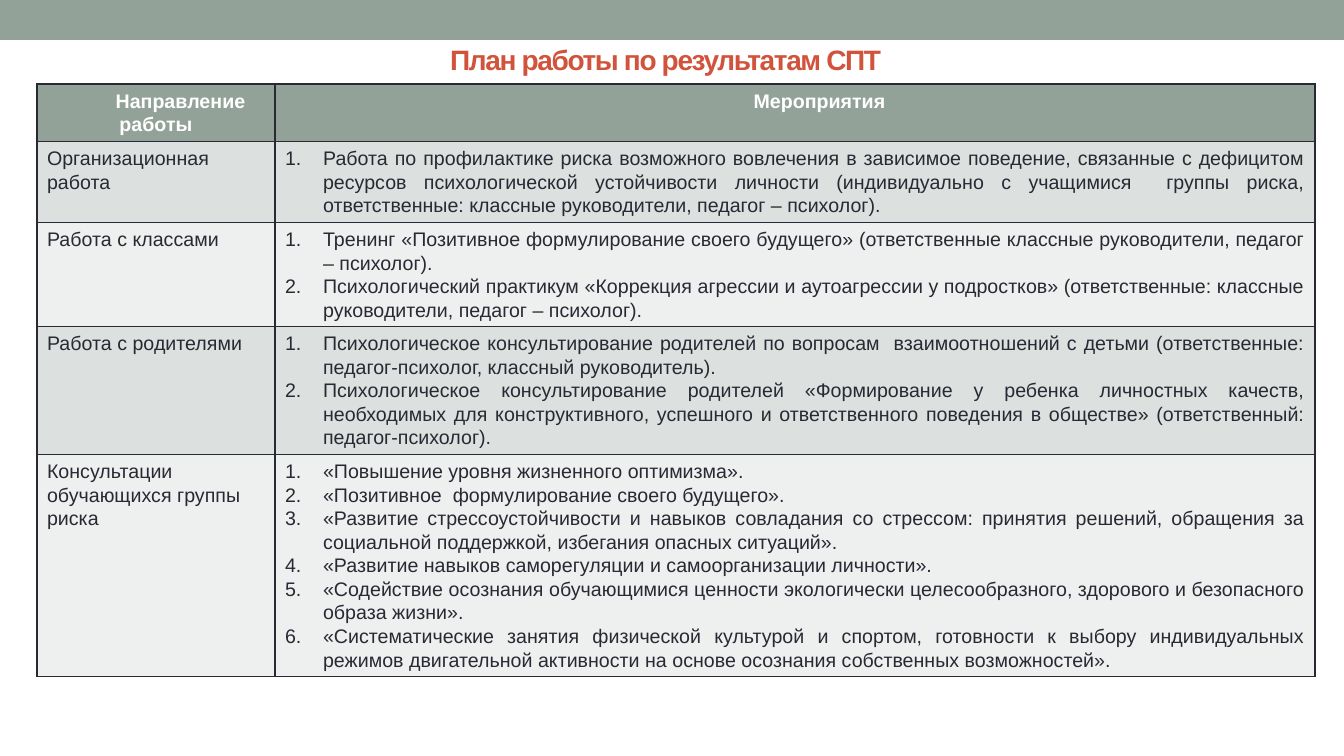
from lxml.etree import SubElement
from pptx import Presentation
from pptx.dml.color import RGBColor
from pptx.enum.shapes import MSO_SHAPE as Shape
from pptx.enum.text import MSO_ANCHOR as Anchor, MSO_AUTO_SIZE as AutoSize, PP_ALIGN as Align
from pptx.oxml.ns import qn
from pptx.util import Pt

PX = 914400 / 100.8
SAGE = RGBColor(0x93, 0xA2, 0x99)
RUST = RGBColor(0xD2, 0x53, 0x3C)
INK = RGBColor(0x29, 0x29, 0x34)
WHITE = RGBColor(0xFF, 0xFF, 0xFF)
BANDS = [RGBColor(0xDC, 0xE0, 0xDE), RGBColor(0xEE, 0xF0, 0xEF)]

TITLE_FONT = {"name": "Arial", "size": Pt(20), "bold": True}
HEADER_FONT = {"name": "Arial", "size": Pt(14), "bold": True}
BODY_FONT = {"name": "Arial", "size": Pt(14), "bold": False}

COLUMNS = [238, 1040]
ROWS = [57, 81, 104, 128, 222]
HEADERS = ["Направление работы", "Мероприятия"]
PLAN = [
    ("Организационная работа", [
        "Работа по профилактике риска возможного вовлечения в зависимое поведение, связанные с дефицитом ресурсов психологической устойчивости личности (индивидуально с учащимися  группы риска, ответственные: классные руководители, педагог – психолог).",
    ]),
    ("Работа с классами", [
        "Тренинг «Позитивное формулирование своего будущего» (ответственные классные руководители, педагог – психолог).",
        "Психологический практикум «Коррекция агрессии и аутоагрессии у подростков» (ответственные: классные руководители, педагог – психолог).",
    ]),
    ("Работа с родителями", [
        "Психологическое консультирование родителей по вопросам  взаимоотношений с детьми (ответственные: педагог-психолог, классный руководитель).",
        "Психологическое консультирование родителей «Формирование у ребенка личностных качеств, необходимых для конструктивного, успешного и ответственного поведения в обществе» (ответственный: педагог-психолог).",
    ]),
    ("Консультации обучающихся группы риска", [
        "«Повышение уровня жизненного оптимизма».",
        "«Позитивное  формулирование своего будущего».",
        "«Развитие стрессоустойчивости и навыков совладания со стрессом: принятия решений, обращения за социальной поддержкой, избегания опасных ситуаций».",
        "«Развитие навыков саморегуляции и самоорганизации личности».",
        "«Содействие осознания обучающимися ценности экологически целесообразного, здорового и безопасного образа жизни».",
        "«Систематические занятия физической культурой и спортом, готовности к выбору индивидуальных режимов двигательной активности на основе осознания собственных возможностей».",
    ]),
]


def px(length):
    return round(length * PX)


def write(para, text, font, color, align):
    para.alignment = align
    span = para.add_run()
    span.text = text
    for key, value in font.items():
        setattr(span.font, key, value)
    span.font.color.rgb = color
    return span


def indent(para, margin, first):
    properties = para._p.get_or_add_pPr()
    properties.set("marL", str(px(margin)))
    properties.set("indent", str(px(first)))
    return properties


def add_title(page, left, top, width, height):
    title = page.shapes.title
    box = {"left": left, "top": top, "width": width, "height": height}
    for key, value in box.items():
        setattr(title, key, px(value))
    frame = title.text_frame
    frame.auto_size = AutoSize.NONE
    frame.vertical_anchor = Anchor.MIDDLE
    span = write(frame.paragraphs[0], "План работы по результатам СПТ", TITLE_FONT, RUST, Align.CENTER)
    span.font._element.set("spc", "-100")


def add_band(page, left, top, width, height):
    band = page.shapes.add_shape(Shape.RECTANGLE, px(left), px(top), px(width), px(height))
    band.shadow.inherit = False
    band.fill.solid()
    band.fill.fore_color.rgb = SAGE
    band.line.fill.background()
    page.shapes.title.element.addprevious(band.element)


def style_cell(cell, color):
    properties = cell._tc.get_or_add_tcPr()
    for side in ("a:lnL", "a:lnR", "a:lnT", "a:lnB"):
        line = SubElement(properties, qn(side), w=str(Pt(1)))
        fill = SubElement(line, qn("a:solidFill"))
        SubElement(fill, qn("a:srgbClr"), val=str(INK))
    cell.fill.solid()
    cell.fill.fore_color.rgb = color


def fill_header(cell, text):
    style_cell(cell, SAGE)
    para = cell.text_frame.paragraphs[0]
    para.line_spacing = 1.07
    indent(para, 0, 49)
    write(para, text, HEADER_FONT, WHITE, Align.CENTER)


def fill_direction(cell, text, color):
    style_cell(cell, color)
    para = cell.text_frame.paragraphs[0]
    para.line_spacing = 1.07
    write(para, text, BODY_FONT, INK, Align.LEFT)


def fill_activities(cell, activities, color):
    style_cell(cell, color)
    frame = cell.text_frame
    for index, activity in enumerate(activities):
        para = frame.add_paragraph() if index else frame.paragraphs[0]
        para.line_spacing = 1.07
        properties = indent(para, 38, -38)
        SubElement(properties, qn("a:buFont"), typeface="+mj-lt")
        SubElement(properties, qn("a:buAutoNum"), type="arabicPeriod")
        write(para, activity, BODY_FONT, INK, Align.JUSTIFY)


def add_plan(page, left, top, width, height):
    frame = page.shapes.add_table(len(ROWS), len(COLUMNS), px(left), px(top), px(width), px(height))
    table = frame.table
    table.first_row = table.horz_banding = False
    for column, width in zip(table.columns, COLUMNS):
        column.width = px(width)
    for row, height in zip(table.rows, ROWS):
        row.height = px(height)
    for index, header in enumerate(HEADERS):
        fill_header(table.cell(0, index), header)
    for index, (direction, activities) in enumerate(PLAN):
        color = BANDS[index % 2]
        fill_direction(table.cell(index + 1, 0), direction, color)
        fill_activities(table.cell(index + 1, 1), activities, color)


def main():
    deck = Presentation()
    deck.slide_width, deck.slide_height = px(1344), px(756)
    page = deck.slides.add_slide(deck.slide_layouts[5])
    add_title(page, 212, 5, 907, 109)
    add_band(page, 0, 0, 1344, 40)
    add_plan(page, 37, 84, sum(COLUMNS), sum(ROWS))
    deck.save("out.pptx")


if __name__ == "__main__":
    main()
